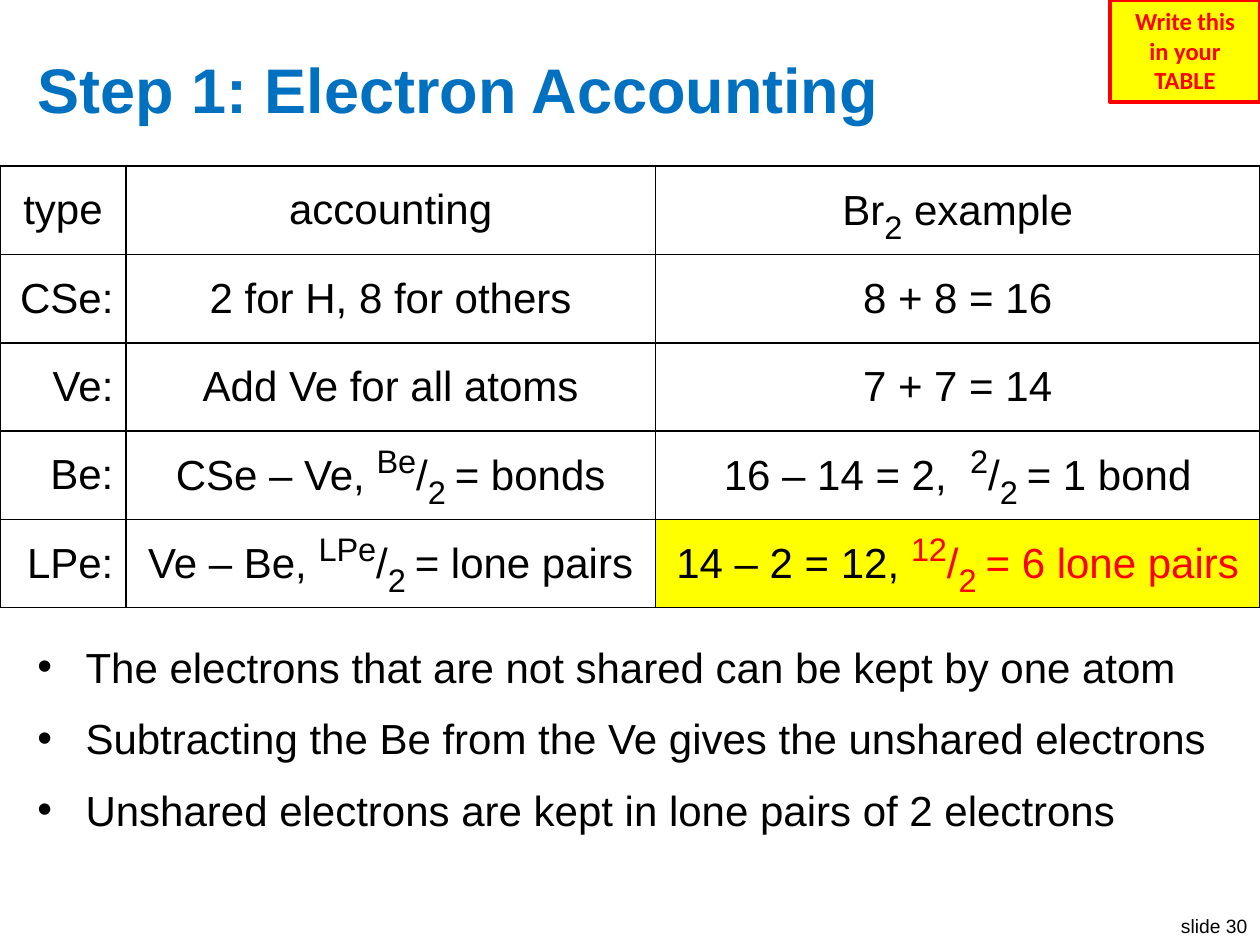
from dataclasses import dataclass
from typing import Optional

from lxml.etree import SubElement
from pptx import Presentation
from pptx.dml.color import RGBColor
from pptx.enum.shapes import MSO_SHAPE
from pptx.enum.text import MSO_ANCHOR, MSO_AUTO_SIZE, PP_ALIGN
from pptx.oxml.ns import qn
from pptx.util import Cm, Pt

BLACK = RGBColor(0x00, 0x00, 0x00)
WHITE = RGBColor(0xFF, 0xFF, 0xFF)
RED = RGBColor(0xFF, 0x00, 0x00)
YELLOW = RGBColor(0xFF, 0xFF, 0x00)
BLUE = RGBColor(0x00, 0x70, 0xC0)

TITLE_FONT = {"name": "Arial", "size": Pt(36), "bold": True}
BODY_FONT = {"name": "Arial", "size": Pt(24)}
SCRIPT_FONT = {"name": "Arial", "size": Pt(32)}
FOOTER_FONT = {"name": "Arial", "size": Pt(11)}
REMINDER_FONT = {"name": "Calibri", "size": Pt(14), "bold": True}

SUPERSCRIPT, SUBSCRIPT = 30, -25
COLUMN_WIDTHS = (Cm(2.54), Cm(10.67), Cm(12.19))
ROW_HEIGHT = Cm(1.78)


@dataclass(frozen=True)
class Piece:
    text: str
    baseline: int = 0
    color: RGBColor = BLACK


@dataclass(frozen=True)
class Entry:
    pieces: tuple[Piece, ...]
    fill: Optional[RGBColor] = WHITE


def plain(text: str) -> Entry:
    return Entry((Piece(text),))


def halved(start: str, top: str, result: str, color: RGBColor = BLACK,
           fill: RGBColor = WHITE) -> Entry:
    return Entry((Piece(start), Piece(top, SUPERSCRIPT, color), Piece("/", 0, color),
                  Piece("2 ", SUBSCRIPT, color), Piece(result, 0, color)), fill)


ROWS = (
    (plain("type"), plain("accounting"),
     Entry((Piece("Br"), Piece("2", SUBSCRIPT), Piece(" example")))),
    (plain("CSe:"), plain("2 for H, 8 for others"), plain("8 + 8 = 16")),
    (plain("Ve:"), plain("Add Ve for all atoms"), plain("7 + 7 = 14")),
    (plain("Be:"), halved("CSe – Ve, ", "Be", "= bonds"),
     halved("16 – 14 = 2,  ", "2", "= 1 bond")),
    (plain("LPe:"), halved("Ve – Be, ", "LPe", "= lone pairs"),
     halved("14 – 2 = 12, ", "12", "= 6 lone pairs", RED, YELLOW)),
)
POINTS = (
    "The electrons that are not shared can be kept by one atom",
    "Subtracting the Be from the Ve gives the unshared electrons",
    "Unshared electrons are kept in lone pairs of 2 electrons",
)


def apply(target, values: dict) -> None:
    for attribute, value in values.items():
        setattr(target, attribute, value)


def place(shape, left: float, top: float, width: float, height: float) -> None:
    apply(shape, {"left": Cm(left), "top": Cm(top),
                  "width": Cm(width), "height": Cm(height)})


def add_piece(paragraph, piece: Piece, font: dict) -> None:
    run = paragraph.add_run()
    run.text = piece.text
    apply(run.font, font)
    run.font.color.rgb = piece.color
    if piece.baseline:
        run.font._element.set("baseline", str(piece.baseline * 1000))


def write_lines(frame, lines: tuple[str, ...], font: dict, color: RGBColor,
                layout: dict) -> None:
    for index, line in enumerate(lines):
        paragraph = frame.paragraphs[0] if index == 0 else frame.add_paragraph()
        apply(paragraph, layout)
        add_piece(paragraph, Piece(line, color=color), font)


def add_bullet(paragraph) -> None:
    properties = paragraph._p.get_or_add_pPr()
    properties.set("marL", str(Cm(0.97)))
    properties.set("indent", str(-Cm(0.97)))
    SubElement(properties, qn("a:buFont")).set("typeface", "Arial")
    SubElement(properties, qn("a:buChar")).set("char", "•")


def add_borders(cell) -> None:
    properties = cell._tc.get_or_add_tcPr()
    for position, side in enumerate(("a:lnL", "a:lnR", "a:lnT", "a:lnB")):
        border = properties.makeelement(qn(side), {"w": str(Pt(1))})
        fill = SubElement(border, qn("a:solidFill"))
        SubElement(fill, qn("a:srgbClr")).set("val", str(BLACK))
        properties.insert(position, border)


def fill_cell(cell, entry: Entry, alignment: PP_ALIGN) -> None:
    cell.vertical_anchor = MSO_ANCHOR.MIDDLE
    cell.fill.solid()
    cell.fill.fore_color.rgb = entry.fill
    add_borders(cell)
    paragraph = cell.text_frame.paragraphs[0]
    paragraph.alignment = alignment
    for piece in entry.pieces:
        add_piece(paragraph, piece, SCRIPT_FONT if piece.baseline else BODY_FONT)


def add_accounting(slide) -> None:
    accounting = slide.shapes.add_table(
        len(ROWS), len(COLUMN_WIDTHS), Cm(0), Cm(3.35),
        sum(COLUMN_WIDTHS), ROW_HEIGHT * len(ROWS)).table
    apply(accounting, {"first_row": False, "horz_banding": False})
    for column, width in zip(accounting.columns, COLUMN_WIDTHS):
        column.width = width
    for row_index, entries in enumerate(ROWS):
        accounting.rows[row_index].height = ROW_HEIGHT
        for column_index, entry in enumerate(entries):
            is_label = row_index > 0 and column_index == 0
            fill_cell(accounting.cell(row_index, column_index), entry,
                      PP_ALIGN.RIGHT if is_label else PP_ALIGN.CENTER)


def add_reminder(slide) -> None:
    reminder = slide.shapes.add_shape(
        MSO_SHAPE.RECTANGLE, Cm(22.38), Cm(0), Cm(3.02), Cm(2.06))
    reminder.shadow.inherit = False
    reminder.fill.solid()
    reminder.fill.fore_color.rgb = YELLOW
    reminder.line.color.rgb = RED
    reminder.line.width = Pt(2.25)
    apply(reminder.text_frame, {"word_wrap": True, "vertical_anchor": MSO_ANCHOR.TOP})
    write_lines(reminder.text_frame, ("Write this", "in your TABLE"),
                REMINDER_FONT, RED, {"alignment": PP_ALIGN.CENTER})


def add_slide_label(slide) -> None:
    label = slide.shapes.add_textbox(Cm(23.5), Cm(18.31), Cm(1.9), Cm(0.74))
    label.text_frame.word_wrap = False
    write_lines(label.text_frame, ("slide 30",), FOOTER_FONT, BLACK,
                {"alignment": PP_ALIGN.RIGHT})


def main() -> None:
    deck = Presentation()
    apply(deck, {"slide_width": Cm(25.4), "slide_height": Cm(19.05)})
    slide = deck.slides.add_slide(deck.slide_layouts[1])

    title, points = slide.placeholders
    place(title, 0.5, 0.76, 24.4, 2.03)
    apply(title.text_frame, {"auto_size": MSO_AUTO_SIZE.NONE,
                             "vertical_anchor": MSO_ANCHOR.MIDDLE})
    write_lines(title.text_frame, ("Step 1: Electron Accounting",), TITLE_FONT, BLUE,
                {"alignment": PP_ALIGN.LEFT})

    place(points, 0.5, 12.8, 24.4, 5.64)
    points.text_frame.auto_size = MSO_AUTO_SIZE.NONE
    write_lines(points.text_frame, POINTS, BODY_FONT, BLACK, {"space_before": Pt(12)})
    for paragraph in points.text_frame.paragraphs:
        add_bullet(paragraph)

    add_accounting(slide)
    add_reminder(slide)
    add_slide_label(slide)
    deck.save("out.pptx")


if __name__ == "__main__":
    main()
